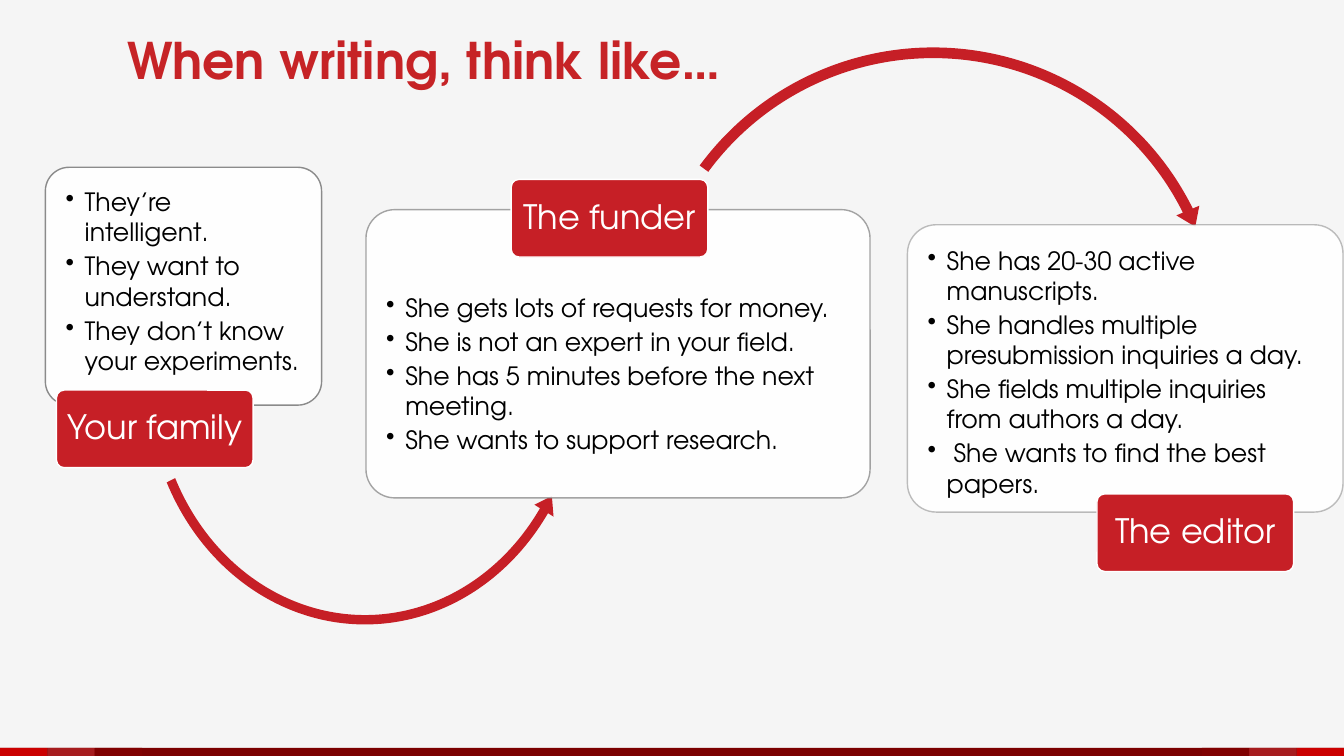
from lxml import etree
from pptx import Presentation
from pptx import util as u
from pptx.dml.color import RGBColor
from pptx.enum import shapes, text
from pptx.oxml.ns import qn

FONT = "TeX Gyre Adventor"
COLORS = {
    "background": "F5F5F5", "title": "C62326", "accent": "C61F26",
    "white": "FFFFFF", "black": "000000", "outline": "7F7F7F",
    "bar": "7B0000", "bright": "CB0000", "middle": "A61C1E", "dark": "800000",
}
LABEL_SIZE = (1.95, 0.77)

# card box, outline opacity, top of its text, label position, label, bullets
READERS = [
    ((0.45, 1.66, 2.74, 2.36), 90, 1.71, (0.56, 3.87), "Your family", [
        "They’re intelligent.",
        "They want to understand.",
        "They don’t know your experiments.",
    ]),
    ((3.63, 2.08, 5, 2.86), 70, 2.76, (5.07, 1.78), "The funder", [
        "She gets lots of requests for money.",
        "She is not an expert in your field.",
        "She has 5 minutes before the next meeting.",
        "She wants to support research.",
    ]),
    ((9, 2.23, 4.32, 2.85), 50, 2.29, (10.88, 4.9), "The editor", [
        "She has 20-30 active manuscripts.",
        "She handles multiple presubmission inquiries a day.",
        "She fields multiple inquiries from authors a day.",
        " She wants to find the best papers.",
    ]),
]


def rgb(name):
    return RGBColor.from_string(COLORS[name])


def inches(box):
    return [u.Inches(length) for length in box]


def set_opacity(fill, percent):
    """Make a solid colour, found in the given fill element, see-through."""
    color = fill.find(".//" + qn("a:srgbClr"))
    etree.SubElement(color, qn("a:alpha"), val=str(percent * 1000))


def add_filled(slide, kind, box, fill, line=None, adjustments=()):
    shape = slide.shapes.add_shape(kind, *inches(box))
    shape.shadow.inherit = False
    shape.fill.solid()
    shape.fill.fore_color.rgb = rgb(fill)
    if line:
        shape.line.color.rgb = rgb(line)
        shape.line.width = u.Pt(1)
    else:
        shape.line.fill.background()
    for index, value in enumerate(adjustments):
        shape.adjustments[index] = value
    return shape


def set_margins(frame, horizontal, vertical):
    frame.margin_left = frame.margin_right = u.Inches(horizontal)
    frame.margin_top = frame.margin_bottom = u.Inches(vertical)


def add_run(paragraph, words, size, color, bold=False):
    run = paragraph.add_run()
    run.text = words
    run.font.name = FONT
    run.font.size = u.Pt(size)
    run.font.bold = bold
    run.font.color.rgb = rgb(color)


def add_title(slide, box, words):
    title = slide.shapes.title
    title.left, title.top, title.width, title.height = inches(box)
    frame = title.text_frame
    frame.word_wrap = True
    frame.auto_size = text.MSO_AUTO_SIZE.NONE
    frame.vertical_anchor = text.MSO_ANCHOR.TOP
    paragraph = frame.paragraphs[0]
    paragraph.alignment = text.PP_ALIGN.LEFT
    paragraph.line_spacing = 0.9
    add_run(paragraph, words, 36, "title", bold=True)


def add_card(slide, box, outline_opacity):
    card = add_filled(slide, shapes.MSO_SHAPE.ROUNDED_RECTANGLE, box,
                      "white", "outline", [0.1])
    properties = card._element.spPr
    set_opacity(properties.find(qn("a:solidFill")), 90)
    set_opacity(properties.find(qn("a:ln")), outline_opacity)


def add_bullets(slide, box, lines):
    frame = slide.shapes.add_textbox(*inches(box)).text_frame
    frame.word_wrap = True
    set_margins(frame, 0.14, 0.14)
    for index, line in enumerate(lines):
        paragraph = frame.paragraphs[0] if index == 0 else frame.add_paragraph()
        properties = paragraph._p.get_or_add_pPr()
        indent = u.Inches(0.19)
        properties.set("marL", str(indent))
        properties.set("indent", str(-indent))
        etree.SubElement(properties, qn("a:buChar"), char="•")
        paragraph.space_after = u.Pt(2.7)
        add_run(paragraph, line, 18, "black")


def add_label(slide, box, words):
    label = add_filled(slide, shapes.MSO_SHAPE.ROUNDED_RECTANGLE, box,
                       "accent", "white", [0.1])
    frame = label.text_frame
    frame.word_wrap = True
    frame.vertical_anchor = text.MSO_ANCHOR.MIDDLE
    set_margins(frame, 0.05, 0.03)
    paragraph = frame.paragraphs[0]
    paragraph.alignment = text.PP_ALIGN.CENTER
    paragraph.line_spacing = 0.9
    add_run(paragraph, words, 24, "white")


def add_reader(slide, box, outline_opacity, text_top, label_at, name, lines):
    left, top, width, height = box
    add_card(slide, box, outline_opacity)
    text_height = height - 0.61 if text_top < top + 0.1 else top + height - text_top - 0.07
    add_bullets(slide, (left + 0.06, text_top, width - 0.12, text_height), lines)
    add_label(slide, label_at + LABEL_SIZE, name)


def add_arrows(slide):
    add_filled(slide, shapes.MSO_SHAPE.LEFT_CIRCULAR_ARROW, (1.39, 1.28, 4.46, 4.98),
               "accent", None, [0.021, 2.57, 21.679, 91.599, 0.025])
    add_filled(slide, shapes.MSO_SHAPE.CIRCULAR_ARROW, (6.31, 0.4, 5.89, 5.89),
               "accent", None, [0.018, 2.155, 200.138, 129.804, 0.021])


def add_footer_bar(slide, box):
    left, top, width, height = box
    block = 0.47
    add_filled(slide, shapes.MSO_SHAPE.RECTANGLE, box, "bar")
    for index, color in enumerate(["bright", "middle", "dark"]):
        for x in (left + index * block, left + width - (index + 1) * block):
            add_filled(slide, shapes.MSO_SHAPE.RECTANGLE, (x, top, block, height), color)


def main():
    presentation = Presentation()
    presentation.slide_width = u.Inches(13.33)
    presentation.slide_height = u.Inches(7.5)
    slide = presentation.slides.add_slide(presentation.slide_layouts[5])
    slide.background.fill.solid()
    slide.background.fill.fore_color.rgb = rgb("background")

    add_footer_bar(slide, (0, 7.42, 13.33, 0.08))
    add_title(slide, (1.16, 0.31, 10, 1.5), "When writing, think like…")
    add_arrows(slide)
    for reader in READERS:
        add_reader(slide, *reader)
    presentation.save("out.pptx")


if __name__ == "__main__":
    main()
